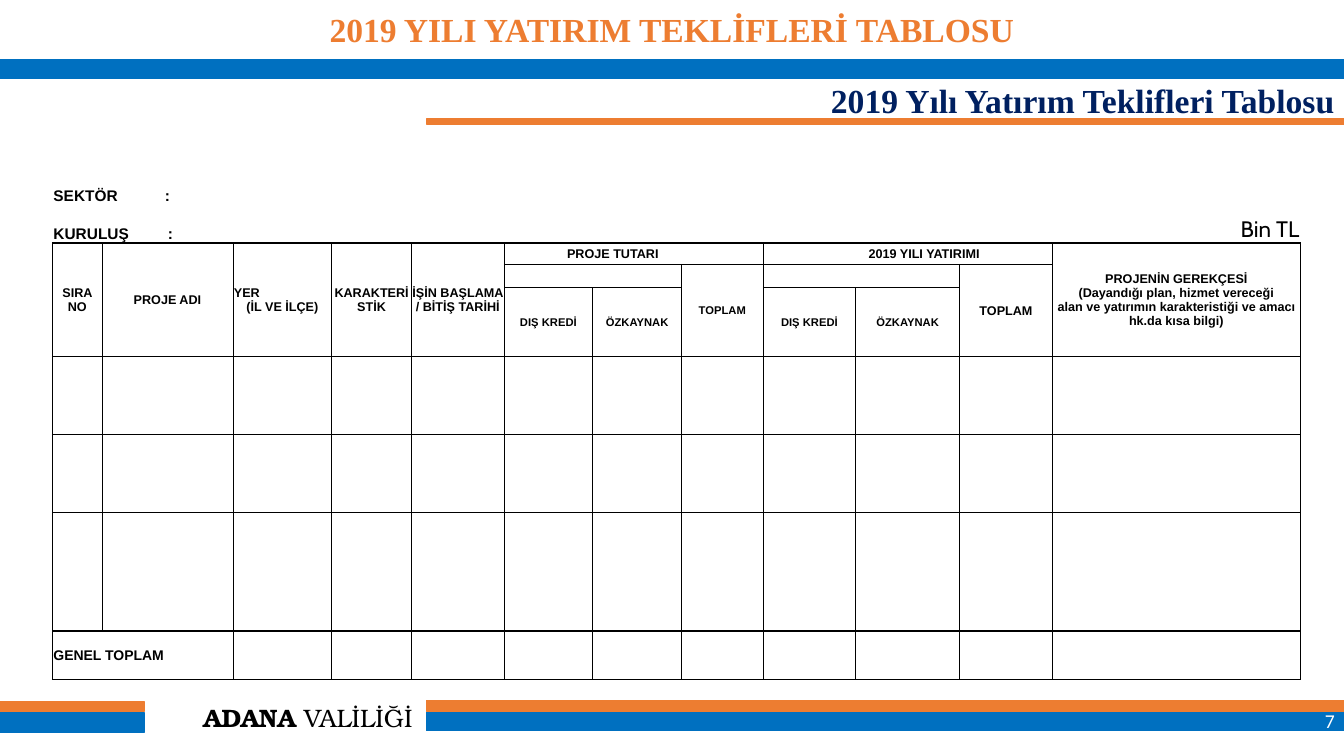
from pptx import Presentation
from pptx.dml.color import RGBColor
from pptx.enum.shapes import MSO_SHAPE
from pptx.enum.text import MSO_ANCHOR, PP_ALIGN
from pptx.oxml.ns import qn
from pptx.util import Pt
from lxml.etree import SubElement

BLUE, ORANGE, NAVY, BLACK, WHITE = "0070C0", "ED7D31", "002060", "000000", "FFFFFF"
LEFT, CENTER, RIGHT = PP_ALIGN.LEFT, PP_ALIGN.CENTER, PP_ALIGN.RIGHT
TOP, MIDDLE, BOTTOM = MSO_ANCHOR.TOP, MSO_ANCHOR.MIDDLE, MSO_ANCHOR.BOTTOM

BARS = [
    (857.5, 508.3, 102.5, 13.7, BLUE),
    (304.6, 509, 553, 13, BLUE),
    (0, 509, 103, 14.4, BLUE),
    (0, 501.1, 103, 7.2, ORANGE),
    (304.6, 500.4, 655.4, 7.9, ORANGE),
    (0, 42.5, 960, 13.7, BLUE),
    (304.6, 85, 655.4, 3.6, ORANGE),
]
TEXTS = [
    ((128.2, 501.8, 183.6, 21.6), MIDDLE, CENTER, "TeX Gyre Bonum", 18, BLACK,
     [("ADANA", True), (" VALİLİĞİ", False)]),
    ((744.5, 500.4, 216, 28.8), MIDDLE, RIGHT, "Calibri", 14, WHITE, [("7", False)]),
    ((3.6, 2.9, 952.6, 36), TOP, CENTER, "Times New Roman", 24, ORANGE,
     [("2019 YILI YATIRIM TEKLİFLERİ TABLOSU", True)]),
    ((304.6, 53.3, 655.6, 36), TOP, RIGHT, "Times New Roman", 24, NAVY,
     [("2019 Yılı Yatırım Teklifleri Tablosu", True)]),
]

TABLE_LEFT, TABLE_TOP = 37.5, 103
COLUMNS = [35.3, 93.6, 70.6, 56.9, 66.2, 63.4, 63.4, 58.3, 66.2, 74.2, 66.2, 177.1]
ROWS = [23.8, 19.4, 27.4, 15.1, 16.6, 49.7, 55.4, 55.4, 85, 34.6]
FIRST_GRID_ROW = 3
HEAVY_LINES = {3, 6, 9, 10}
SPANS = {
    (0, 0): (1, 12), (1, 0): (1, 2), (1, 2): (1, 2), (2, 0): (1, 2), (2, 2): (1, 3),
    (3, 5): (1, 3), (3, 8): (1, 3), (4, 5): (1, 2), (4, 7): (2, 1), (4, 8): (1, 2),
    (4, 10): (2, 1), (9, 0): (1, 2),
    **{(3, column): (3, 1) for column in (0, 1, 2, 3, 4, 11)},
}
LABELS = {
    (1, 0): (11, [("SEKTÖR\t:", LEFT)]),
    (2, 0): (11, [("KURULUŞ\t:", LEFT)]),
    (2, 11): (16, [("Bin TL", RIGHT)]),
    (3, 0): (9, [("SIRA NO", CENTER)]),
    (3, 1): (9, [("PROJE ADI", CENTER)]),
    (3, 2): (9, [("YER", LEFT), ("(İL VE İLÇE)", CENTER)]),
    (3, 3): (9, [("KARAKTERİSTİK", CENTER)]),
    (3, 4): (9, [("İŞİN BAŞLAMA / BİTİŞ TARİHİ", CENTER)]),
    (3, 5): (9, [("PROJE TUTARI", LEFT)]),
    (3, 8): (9, [("2019 YILI YATIRIMI", CENTER)]),
    (3, 11): (9, [("PROJENİN GEREKÇESİ", CENTER),
                  ("(Dayandığı plan, hizmet vereceği", CENTER),
                  ("alan ve yatırımın karakteristiği ve amacı hk.da kısa bilgi)", CENTER)]),
    (4, 7): (8, [("TOPLAM", CENTER)]),
    (4, 10): (9, [("TOPLAM", CENTER)]),
    (5, 5): (8, [("DIŞ KREDİ", CENTER)]),
    (5, 6): (8, [("ÖZKAYNAK", CENTER)]),
    (5, 8): (8, [("DIŞ KREDİ", CENTER)]),
    (5, 9): (8, [("ÖZKAYNAK", CENTER)]),
    (9, 0): (10, [("GENEL TOPLAM", LEFT)]),
}
INDENTS = {(3, 5): 45, (3, 8): 24}
TABS = {(1, 0): 79.5, (2, 0): 81.7}


def color(value):
    return RGBColor.from_string(value)


def add_span(para, text, font, size, shade, bold):
    span = para.add_run()
    span.text = text
    span.font.name = font
    span.font.size = Pt(size)
    span.font.bold = bold
    span.font.color.rgb = color(shade)


def add_bar(page, left, top, width, height, shade):
    bar = page.shapes.add_shape(MSO_SHAPE.RECTANGLE, Pt(left), Pt(top), Pt(width), Pt(height))
    bar.shadow.inherit = False
    bar.fill.solid()
    bar.fill.fore_color.rgb = color(shade)
    bar.line.color.rgb = color(shade)
    bar.line.width = Pt(1)


def add_text(page, place, anchor, align, font, size, shade, spans):
    box = page.shapes.add_textbox(*[Pt(value) for value in place])
    frame = box.text_frame
    frame.word_wrap = True
    frame.vertical_anchor = anchor
    para = frame.paragraphs[0]
    para.alignment = align
    for text, bold in spans:
        add_span(para, text, font, size, shade, bold)


def draw_borders(cell, widths):
    properties = cell._tc.get_or_add_tcPr()
    for position, (side, width) in enumerate(zip("LRTB", widths)):
        line = properties.makeelement(qn(f"a:ln{side}"), {"w": str(Pt(width))})
        if width:
            fill = SubElement(line, qn("a:solidFill"))
            SubElement(fill, qn("a:srgbClr"), val=BLACK)
        else:
            SubElement(line, qn("a:noFill"))
        properties.insert(position, line)


def border_widths(row, column):
    height, width = SPANS.get((row, column), (1, 1))
    if row < FIRST_GRID_ROW:
        return 0, 0, 0, 1 if row + 1 == FIRST_GRID_ROW else 0
    return (
        1 if column == 0 else 0.5,
        1 if column + width == len(COLUMNS) else 0.5,
        1 if row in HEAVY_LINES else 0.5,
        1 if row + height in HEAVY_LINES else 0.5,
    )


def write_cell(cell, spot):
    row, column = spot
    cell.margin_left = Pt(INDENTS.get(spot, 0.7))
    cell.margin_right = cell.margin_top = Pt(0.7)
    cell.margin_bottom = Pt(0)
    cell.vertical_anchor = BOTTOM if row < FIRST_GRID_ROW else MIDDLE
    cell.fill.background()
    frame = cell.text_frame
    if spot not in LABELS:
        SubElement(frame.paragraphs[0]._p, qn("a:endParaRPr"), sz="800")
        return
    size, lines = LABELS[spot]
    unit = spot == (2, 11)
    for number, (text, align) in enumerate(lines):
        para = frame.add_paragraph() if number else frame.paragraphs[0]
        if spot in TABS:
            stops = SubElement(para._p.get_or_add_pPr(), qn("a:tabLst"))
            SubElement(stops, qn("a:tab"), pos=str(Pt(TABS[spot])), algn="l")
        para.alignment = align
        add_span(para, text, "Cabin" if unit else "Arial", size, BLACK, not unit)


def add_investment_table(page):
    holder = page.shapes.add_table(len(ROWS), len(COLUMNS), Pt(TABLE_LEFT), Pt(TABLE_TOP),
                                   Pt(sum(COLUMNS)), Pt(sum(ROWS)))
    table = holder.table
    table.first_row = False
    table.horz_banding = False
    for column, width in zip(table.columns, COLUMNS):
        column.width = Pt(width)
    for row, height in zip(table.rows, ROWS):
        row.height = Pt(height)
    for (row, column), (height, width) in SPANS.items():
        table.cell(row, column).merge(table.cell(row + height - 1, column + width - 1))
    for row in range(len(ROWS)):
        for column in range(len(COLUMNS)):
            cell = table.cell(row, column)
            write_cell(cell, (row, column))
            draw_borders(cell, border_widths(row, column))


def main():
    deck = Presentation()
    deck.slide_width, deck.slide_height = Pt(960), Pt(540)
    page = deck.slides.add_slide(deck.slide_layouts[6])
    for bar in BARS:
        add_bar(page, *bar)
    for text in TEXTS:
        add_text(page, *text)
    add_investment_table(page)
    deck.save("out.pptx")


if __name__ == "__main__":
    main()
